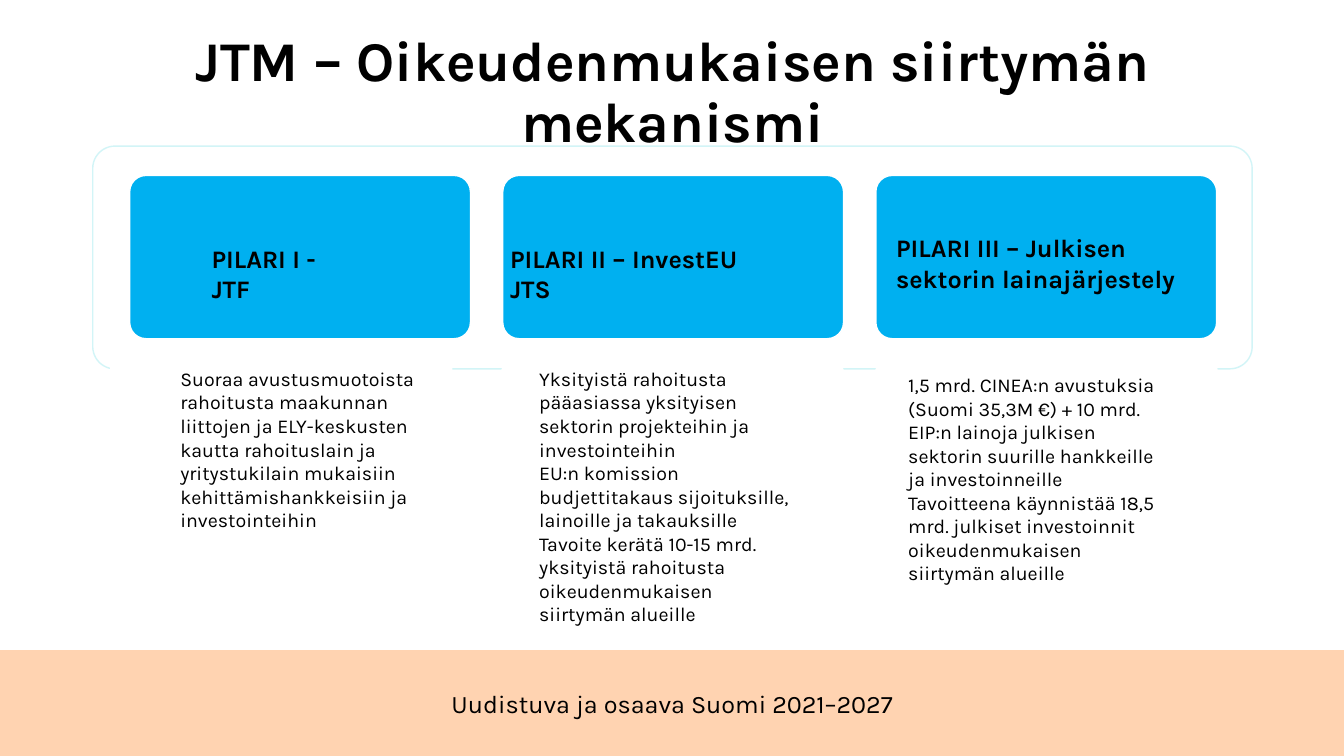
from lxml.etree import SubElement
from pptx import Presentation
from pptx.dml.color import RGBColor
from pptx.enum.shapes import MSO_SHAPE
from pptx.enum.text import MSO_ANCHOR, PP_ALIGN
from pptx.oxml.ns import qn
from pptx.util import Inches, Pt

WIDTH, HEIGHT = Inches(13.33), Inches(7.5)

BLACK = RGBColor(0x00, 0x00, 0x00)
WHITE = RGBColor(0xFF, 0xFF, 0xFF)
PEACH = RGBColor(0xFF, 0xD3, 0xB1)
BLUE = RGBColor(0x00, 0xB0, 0xF0)
PALE_AQUA = RGBColor(0xCE, 0xF4, 0xF7)

# Text formats
TITLE = {"name": "Karla", "size": Pt(40), "bold": True}
HEADING = {"name": "Karla", "size": Pt(18), "bold": True}
BODY = {"name": "Karla", "size": Pt(14), "bold": False}
FOOTER = {"name": "Karla", "size": Pt(18), "bold": False}

# All places are left, top, width, height in percent of the slide
CARD_LEFT, CARD_STEP = 9.65, 27.76
CARD_TOP, CARD_WIDTH, CARD_HEIGHT = 23.2, 25.36, 21.6
DETAIL_HEIGHT = 36.13

# One entry per pillar; "detail" is left and top of the panel below its card
PILLARS = [
    {
        "detail": (8.25, 46.27),
        "heading_place": (15, 31.47, 11.55, 5.33),
        "heading": ["PILARI I - JTF"],
        "body_place": (12.68, 47.87, 19.73, 23.33),
        "body": [
            "Suoraa avustusmuotoista rahoitusta maakunnan liittojen ja "
            "ELY-keskusten kautta rahoituslain ja yritystukilain mukaisiin "
            "kehittämishankkeisiin ja investointeihin",
        ],
    },
    {
        "detail": (37.36, 48.8),
        "heading_place": (37.21, 31.47, 20.18, 5.33),
        "heading": ["PILARI II – InvestEU JTS"],
        "body_place": (39.38, 47.87, 20.48, 32.8),
        "body": [
            "Yksityistä rahoitusta pääasiassa yksityisen sektorin "
            "projekteihin ja investointeihin",
            "EU:n komission budjettitakaus sijoituksille, lainoille ja "
            "takauksille",
            "Tavoite kerätä 10-15 mrd. yksityistä rahoitusta "
            "oikeudenmukaisen siirtymän alueille",
        ],
    },
    {
        "detail": (65.19, 48.8),
        "heading_place": (65.94, 30.13, 23.48, 9.47),
        "heading": ["PILARI III – Julkisen", "sektorin lainajärjestely"],
        "body_place": (66.84, 48.67, 20.48, 33.6),
        "body": [
            "1,5 mrd. CINEA:n avustuksia (Suomi 35,3M €) + 10 mrd. EIP:n "
            "lainoja julkisen sektorin suurille hankkeille ja investoinneille",
            "Tavoitteena käynnistää 18,5 mrd. julkiset investoinnit "
            "oikeudenmukaisen siirtymän alueille",
        ],
    },
]


def to_lengths(place):
    left, top, width, height = place
    return (
        round(WIDTH * left / 100),
        round(HEIGHT * top / 100),
        round(WIDTH * width / 100),
        round(HEIGHT * height / 100),
    )


def add_block(slide, kind, place, fill, outline=None, corners=()):
    block = slide.shapes.add_shape(kind, *to_lengths(place))
    block.shadow.inherit = False
    block.fill.solid()
    block.fill.fore_color.rgb = fill
    if outline is None:
        block.line.fill.background()
    else:
        block.line.color.rgb = outline
        block.line.width = Pt(1)
    for index, corner in enumerate(corners):
        block.adjustments[index] = corner
    return block


def set_opacity(block, percent):
    for color in block._element.spPr.iter(qn("a:srgbClr")):
        SubElement(color, qn("a:alpha"), val=str(percent * 1000))


def add_text(slide, place, lines, font_format, align=PP_ALIGN.LEFT,
             anchor=MSO_ANCHOR.TOP, inset=True, line_spacing=None):
    frame = slide.shapes.add_textbox(*to_lengths(place)).text_frame
    frame.word_wrap = True
    frame.vertical_anchor = anchor
    if not inset:
        for side in ("left", "top", "right", "bottom"):
            setattr(frame, f"margin_{side}", 0)
    for index, line in enumerate(lines):
        paragraph = frame.add_paragraph() if index else frame.paragraphs[0]
        paragraph.alignment = align
        paragraph.line_spacing = line_spacing
        run = paragraph.add_run()
        run.text = line
        run.font.color.rgb = BLACK
        for attribute, value in font_format.items():
            setattr(run.font, attribute, value)


def main():
    presentation = Presentation()
    presentation.slide_width, presentation.slide_height = WIDTH, HEIGHT
    slide = presentation.slides.add_slide(presentation.slide_layouts[6])

    # Footer band
    add_block(slide, MSO_SHAPE.RECTANGLE, (0, 86, 100, 14), PEACH)
    add_text(slide, (24.4, 91.07, 51.24, 4),
             ["Uudistuva ja osaava Suomi 2021–2027"], FOOTER,
             PP_ALIGN.CENTER, MSO_ANCHOR.MIDDLE, inset=False)

    # Title
    add_text(slide, (6.9, 5.33, 86.27, 15.07),
             ["JTM – Oikeudenmukaisen siirtymän mekanismi"], TITLE,
             PP_ALIGN.CENTER, MSO_ANCHOR.BOTTOM, inset=False,
             line_spacing=0.9)

    # Frame around the three pillars
    frame = add_block(slide, MSO_SHAPE.ROUNDED_RECTANGLE,
                      (6.9, 19.33, 86.27, 29.47), WHITE, PALE_AQUA, (0.1,))
    set_opacity(frame, 90)

    # Pillar cards with the panels below them
    for index, pillar in enumerate(PILLARS):
        card_place = (CARD_LEFT + index * CARD_STEP, CARD_TOP,
                      CARD_WIDTH, CARD_HEIGHT)
        add_block(slide, MSO_SHAPE.ROUNDED_RECTANGLE, card_place,
                  BLUE, WHITE, (0.1,))
        detail = add_block(slide, MSO_SHAPE.ROUND_2_SAME_RECTANGLE,
                           (*pillar["detail"], CARD_WIDTH, DETAIL_HEIGHT),
                           WHITE, WHITE, (0.105, 0))
        detail.rotation = 180

    # Pillar texts
    for pillar in PILLARS:
        add_text(slide, pillar["heading_place"], pillar["heading"], HEADING)
        add_text(slide, pillar["body_place"], pillar["body"], BODY)

    presentation.save("out.pptx")


if __name__ == "__main__":
    main()
